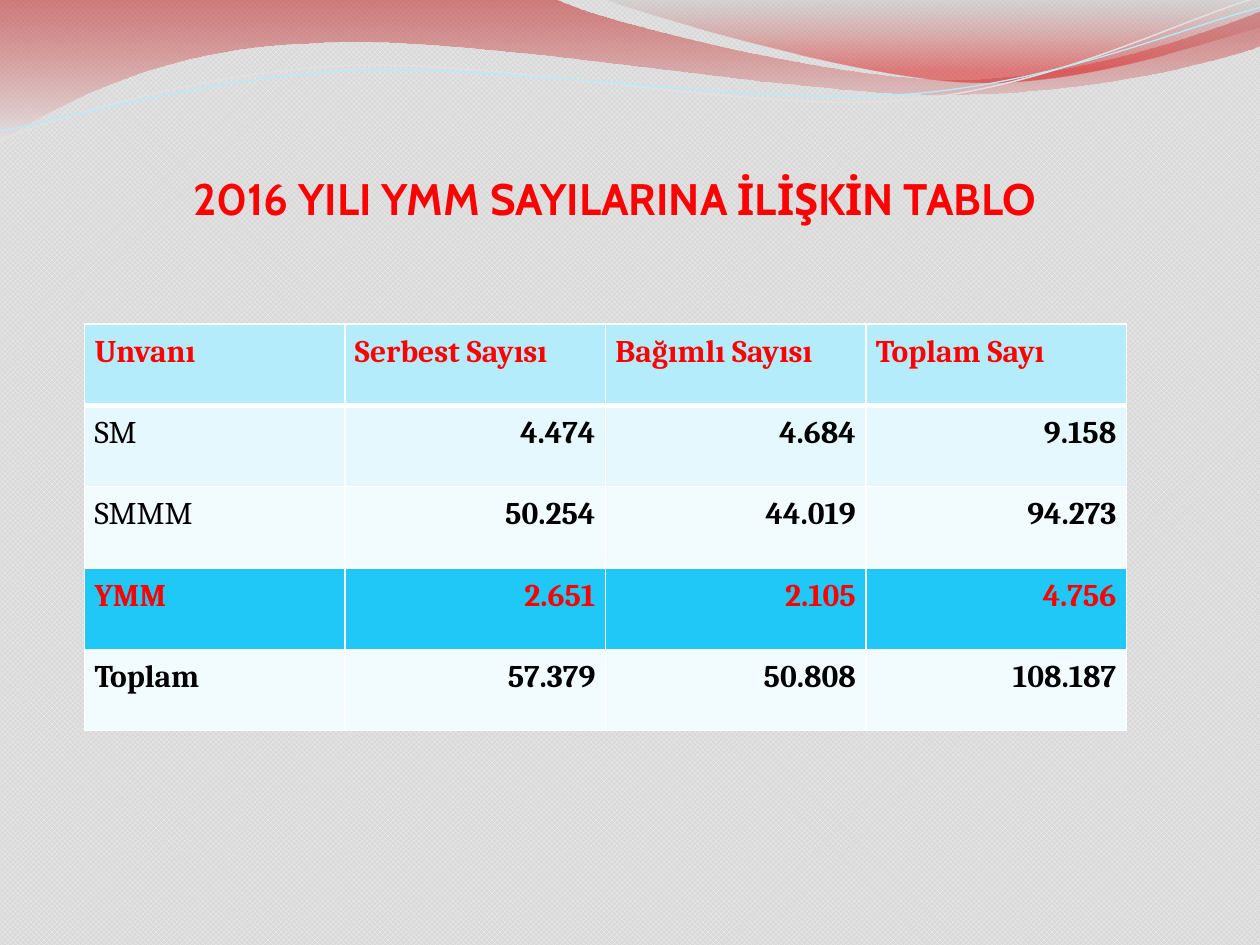
import math

import lxml.etree
import pptx
import pptx.dml.color
import pptx.enum.dml
import pptx.enum.text
import pptx.oxml.ns
import pptx.util

Inches, Pt = pptx.util.Inches, pptx.util.Pt
RGBColor = pptx.dml.color.RGBColor
ALIGN = pptx.enum.text.PP_ALIGN
qn = pptx.oxml.ns.qn

RED = RGBColor(0xFF, 0, 0)
BLACK = RGBColor(0, 0, 0)
WHITE = RGBColor(0xFF, 0xFF, 0xFF)
PALE_GREY = RGBColor(0xF2, 0xF2, 0xF2)
MID_GREY = RGBColor(0xD9, 0xD9, 0xD9)
LINE_GREY = RGBColor(0xE1, 0xE1, 0xE1)
FADE_GREY = RGBColor(0xE7, 0xE7, 0xE7)
SILVER = RGBColor(0xBD, 0xBD, 0xBD)
DARK_RED = RGBColor(0xBD, 0, 0)
BRIGHT_RED = RGBColor(0xE1, 0, 0)
SKY = RGBColor(0xB4, 0xEC, 0xFC)
ICE = RGBColor(0xE5, 0xF8, 0xFE)
FROST = RGBColor(0xF2, 0xFB, 0xFE)
CYAN = RGBColor(0x20, 0xC8, 0xF7)

# Content
TITLE = "2016 YILI YMM SAYILARINA İLİŞKİN TABLO"
# Each row: texts, fill, text colour, bold first cell
ROWS = [
    (("Unvanı", "Serbest Sayısı", "Bağımlı Sayısı", "Toplam Sayı"), SKY, RED, True),
    (("SM", "4.474", "4.684", "9.158"), ICE, BLACK, False),
    (("SMMM", "50.254", "44.019", "94.273"), FROST, BLACK, False),
    (("YMM", "2.651", "2.105", "4.756"), CYAN, RED, True),
    (("Toplam", "57.379", "50.808", "108.187"), FROST, BLACK, True),
]

# Waves in inches: two numbers are a straight step, six are a Bezier step
FILLED_WAVES = [
    ([(0, 0), (4.4, -0.01), (4.76, 0.17, 6.64, 0.63, 7.58, 0.63),
      (8.53, 0.63, 9.58, 0.26, 10, 0.09), (10.01, 0.36),
      (9.83, 0.44, 8.7, 0.76, 7.46, 0.75), (6.22, 0.75, 3.82, 0.28, 2.57, 0.34),
      (1.29, 0.36, 0.46, 0.83, -0.01, 1.13), (0, 0)],
     [(0, DARK_RED, 45), (1, FADE_GREY, 55)]),
    ([(4.79, -0.01), (5.09, 0.11, 6.82, 0.62, 7.69, 0.65),
      (8.56, 0.69, 9.61, 0.32, 10, 0.21), (10, 0), (4.79, -0.01)],
     [(0, SILVER, 30), (0.8, BRIGHT_RED, 45)]),
]
# Each line: steps as seen on the slide, centre of its tilt, colour, width
LINE_WAVES = [
    ([(0, 1.11), (0.48, 0.93, 1.58, 0.57, 2.77, 0.52),
      (3.95, 0.47, 5.93, 0.89, 7.13, 0.8), (8.33, 0.71, 9.38, 0.15, 9.98, -0.02)],
     (4.99, 0.58), LINE_GREY, 0.85),
    ([(0, 1.04), (0.47, 0.96, 1.64, 0.61, 2.83, 0.56),
      (4.03, 0.51, 5.97, 0.84, 7.17, 0.75), (8.36, 0.67, 9.41, 0.21, 10, 0.06)],
     (5, 0.59), SKY, 0.75),
]
TILT = 2.7


def pairs(step):
    return list(zip(step[::2], step[1::2]))


def level(step, centre):
    """Undo the tilt of a step, so that the shape's rotation can restore it."""
    cos, sin = math.cos(math.radians(TILT)), math.sin(math.radians(TILT))
    flat = []
    for x, y in pairs(step):
        dx, dy = x - centre[0], y - centre[1]
        flat += [centre[0] + dx * cos - dy * sin, centre[1] + dx * sin + dy * cos]
    return flat


def add_wave(slide, steps, close):
    points = [(Inches(x), Inches(y)) for step in steps for x, y in pairs(step)]
    builder = slide.shapes.build_freeform(*points[0], scale=1.0)
    builder.add_line_segments(points[1:], close=close)
    wave = builder.convert_to_shape()
    wave.shadow.inherit = False
    # Join each three points of a Bezier step into one curve
    segments = iter(list(wave._element.iter(qn("a:lnTo"))))
    for step in steps[1:]:
        parts = [next(segments) for _ in pairs(step)]
        if len(parts) == 3:
            curve = lxml.etree.Element(qn("a:cubicBezTo"))
            parts[0].addprevious(curve)
            for part in parts:
                curve.append(part[0])
                part.getparent().remove(part)
    return wave


def shade(wave, stops):
    """Fill from top to bottom with translucent colours."""
    wave.line.fill.background()
    wave.fill.gradient()
    wave.fill.gradient_angle = 270
    for stop, (position, color, _) in zip(wave.fill.gradient_stops, stops):
        stop.position = position
        stop.color.rgb = color
    for tag, (_, _, opacity) in zip(wave._element.iter(qn("a:srgbClr")), stops):
        lxml.etree.SubElement(tag, qn("a:alpha"), val=str(opacity * 1000))


def add_borders(cell, widths):
    properties = cell._tc.get_or_add_tcPr()
    for side, width in zip("LRTB", widths):
        border = lxml.etree.SubElement(properties, qn("a:ln" + side), w=str(Pt(width)))
        solid = lxml.etree.SubElement(border, qn("a:solidFill"))
        lxml.etree.SubElement(solid, qn("a:srgbClr"), val=str(WHITE))


def set_font(paragraph, name, size, color, bold):
    font = paragraph.font
    font.name, font.size, font.bold = name, Pt(size), bold
    font.color.rgb = color


presentation = pptx.Presentation()
presentation.slide_width, presentation.slide_height = Inches(10), Inches(7.5)
slide = presentation.slides.add_slide(presentation.slide_layouts[5])

# Background
backdrop = slide.background.fill
backdrop.patterned()
backdrop.pattern = pptx.enum.dml.MSO_PATTERN.TRELLIS
backdrop.fore_color.rgb = PALE_GREY
backdrop.back_color.rgb = MID_GREY

# Waves along the top
for steps, stops in FILLED_WAVES:
    shade(add_wave(slide, steps, True), stops)
for steps, centre, color, width in LINE_WAVES:
    wave = add_wave(slide, [level(step, centre) for step in steps], False)
    wave.rotation = 360 - TILT
    wave.fill.background()
    wave.line.color.rgb = color
    wave.line.width = Pt(width)

# Title
title = slide.shapes.title
title.left, title.top = Inches(0.51), Inches(1.15)
title.width, title.height = Inches(8.74), Inches(0.63)
heading = title.text_frame
heading.text = TITLE
heading.word_wrap = True
heading.auto_size = pptx.enum.text.MSO_AUTO_SIZE.NONE
heading.vertical_anchor = pptx.enum.text.MSO_ANCHOR.BOTTOM
heading.margin_left = heading.margin_right = heading.margin_bottom = 0
heading.margin_top = Inches(0.05)
heading.paragraphs[0].alignment = ALIGN.CENTER
set_font(heading.paragraphs[0], "Cabin", 25.2, RED, True)

# Table of member counts
counts = slide.shapes.add_table(len(ROWS), len(ROWS[0][0]), Inches(0.67), Inches(2.57),
                                Inches(8.27), Inches(3.23)).table
for r, (texts, fill, color, bold_label) in enumerate(ROWS):
    for c, text in enumerate(texts):
        cell = counts.cell(r, c)
        add_borders(cell, (1, 1, 3 if r == 1 else 1, 3 if r == 0 else 1))
        cell.fill.solid()
        cell.fill.fore_color.rgb = fill
        cell.margin_left = cell.margin_right = Inches(0.08)
        cell.margin_top = cell.margin_bottom = Inches(0.08)
        cell.text = text
        paragraph = cell.text_frame.paragraphs[0]
        paragraph.alignment = ALIGN.RIGHT if r and c else ALIGN.LEFT
        set_font(paragraph, "Cambria", 18, color, bold_label or c > 0)

presentation.save("out.pptx")
